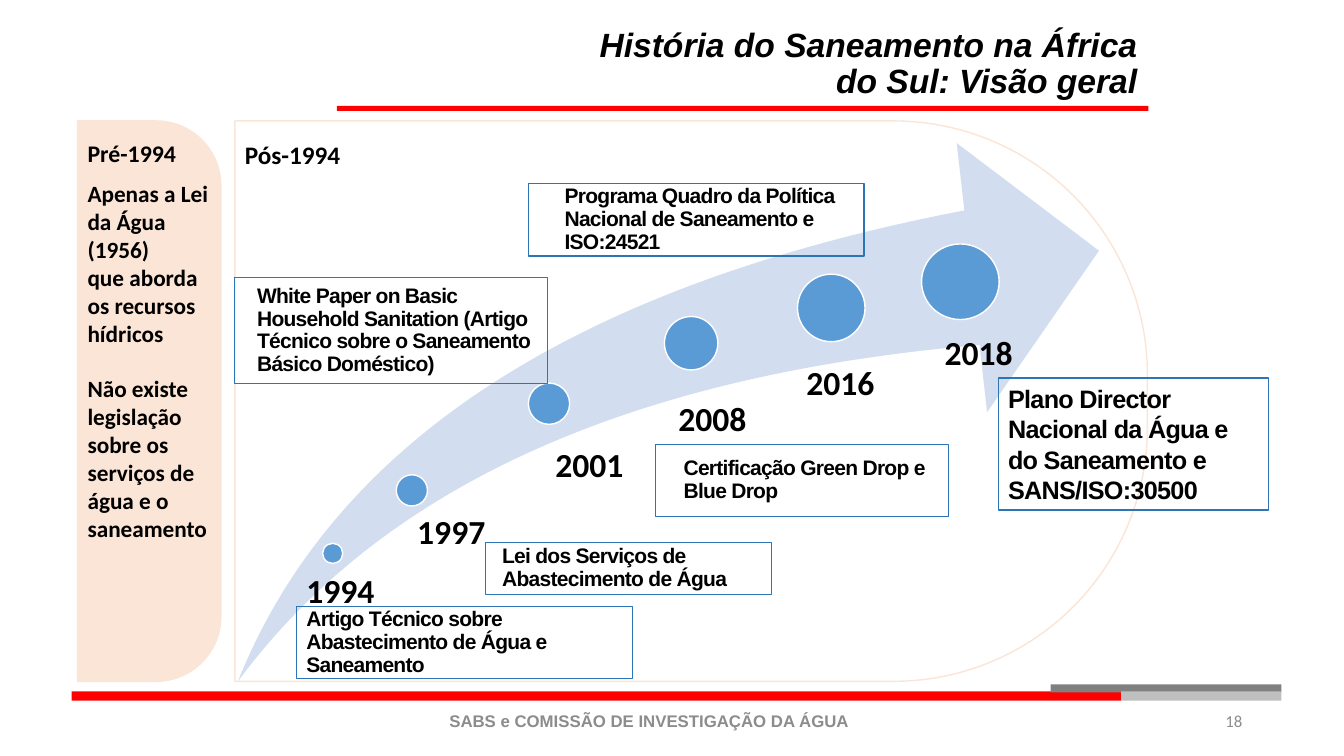
from pptx import Presentation
from pptx.dml.color import RGBColor
from pptx.enum.shapes import MSO_SHAPE
from pptx.enum.text import MSO_ANCHOR, MSO_AUTO_SIZE, PP_ALIGN
from pptx.util import Inches, Pt

RECT, OVAL = MSO_SHAPE.RECTANGLE, MSO_SHAPE.OVAL
SWOOSH, ROUND_TOP = MSO_SHAPE.SWOOSH_ARROW, MSO_SHAPE.ROUND_2_SAME_RECTANGLE
TOP, MIDDLE, BOTTOM = MSO_ANCHOR.TOP, MSO_ANCHOR.MIDDLE, MSO_ANCHOR.BOTTOM
LEFT, CENTER, RIGHT = PP_ALIGN.LEFT, PP_ALIGN.CENTER, PP_ALIGN.RIGHT
NO_FIT = MSO_AUTO_SIZE.NONE

COLORS = {
    "red": "FF0000", "gray": "808080", "silver": "BFBFBF", "footer": "8C8C8C",
    "peach": "FBE5D6", "swoosh": "D2DEEF", "dot": "5B9BD5",
    "border": "2E75B6", "white": "FFFFFF", "black": "000000",
}

BARS = [
    ((3.34, 1.05, 8.05, 0.05), "red"),
    ((0.71, 6.86, 10.41, 0.09), "red"),
    ((10.42, 6.79, 2.29, 0.08), "gray"),
    ((11.12, 6.86, 1.59, 0.09), "silver"),
]

# year, year position, dot box, note box, note left inset, note size, line spacing, note
MILESTONES = [
    ("1994", (2.94, 5.6), (3.2, 5.39, 0.2, 0.2), (2.94, 6.02, 3.33, 0.71), 0.1, 15, 0.9,
     "Artigo Técnico sobre Abastecimento de Água e Saneamento"),
    ("1997", (4.04, 5.02), (3.93, 4.71, 0.31, 0.31), (4.82, 5.38, 2.83, 0.52), 0.16, 15, 0.9,
     "Lei dos Serviços de Abastecimento de Água"),
    ("2001", (5.41, 4.35), (5.24, 3.8, 0.41, 0.41), (2.33, 2.75, 3.1, 1.06), 0.22, 15, 0.9,
     "White Paper on Basic Household Sanitation (Artigo Técnico sobre o Saneamento "
     "Básico Doméstico)"),
    ("2008", (6.63, 3.9), (6.59, 3.14, 0.53, 0.53), (6.5, 4.41, 2.91, 0.71), 0.28, 15, 0.9,
     "Certificação Green Drop e Blue Drop"),
    ("2016", (7.9, 3.54), (7.91, 2.72, 0.67, 0.67), (5.24, 1.82, 3.33, 0.72), 0.36, 15, 0.9,
     "Programa Quadro da Política Nacional de Saneamento e ISO:24521"),
    ("2018", (9.27, 3.24), (9.14, 2.42, 0.77, 0.75), (9.9, 3.75, 2.68, 1.31), 0.1, 18, 1.0,
     "Plano Director Nacional da Água e do Saneamento e SANS/ISO:30500"),
]


def rgb(name):
    """Return the named colour."""
    return RGBColor.from_string(COLORS[name])


def add_shape(s, kind, box, fill=None, line=None, width=1):
    """Add a flat preset shape in the box."""
    sp = s.shapes.add_shape(kind, *map(Inches, box))
    sp.shadow.inherit = False
    if fill:
        sp.fill.solid()
        sp.fill.fore_color.rgb = rgb(fill)
    else:
        sp.fill.background()
    if line:
        sp.line.color.rgb = rgb(line)
        sp.line.width = Pt(width)
    else:
        sp.line.fill.background()
    return sp


def write(sp, paragraphs, size, font="Calibri", color="black", bold=True, italic=False,
          align=LEFT, anchor=TOP, spacing=None, tracking=None, insets=(0.1, 0.05, 0.1, 0.05)):
    """Fill a shape with paragraphs in one text style."""
    tf = sp.text_frame
    tf.word_wrap = True
    tf.auto_size = NO_FIT
    tf.vertical_anchor = anchor
    tf.margin_left, tf.margin_top, tf.margin_right, tf.margin_bottom = map(Inches, insets)
    tf.text = "\n".join(paragraphs)
    for p in tf.paragraphs:
        p.alignment = align
        p.line_spacing = spacing
        for r in p.runs:
            r.font.name, r.font.size = font, Pt(size)
            r.font.bold, r.font.italic = bold, italic
            r.font.color.rgb = rgb(color)
            if tracking is not None:
                r._r.get_or_add_rPr().set("spc", str(int(tracking * 100)))
    return tf


def add_text(s, box, paragraphs, size, **style):
    """Add a text box in the box."""
    return write(s.shapes.add_textbox(*map(Inches, box)), paragraphs, size, **style)


def add_frame(s):
    """Add the coloured bars, the footer and the page number."""
    for box, color in BARS:
        add_shape(s, RECT, box, color)
    add_text(s, (4.19, 6.95, 4.5, 0.4), ["SABS e COMISSÃO DE INVESTIGAÇÃO DA ÁGUA"], 12,
             font="Arial", color="footer", align=CENTER, anchor=MIDDLE)
    add_text(s, (9.42, 6.95, 3, 0.4), ["18"], 12,
             color="footer", bold=False, align=RIGHT, anchor=MIDDLE)


def add_title(s, box):
    """Place the slide title in the box."""
    sp = s.shapes.title
    sp.left, sp.top, sp.width, sp.height = map(Inches, box)
    write(sp, ["História do Saneamento na África do Sul: Visão geral"], 24, font="Arial",
          italic=True, align=RIGHT, anchor=BOTTOM, spacing=0.9)


def add_panel(s, box, fill=None):
    """Add a panel with rounded right corners that covers the box."""
    x, y, w, h = box
    sp = add_shape(s, ROUND_TOP, (x + (w - h) / 2, y + (h - w) / 2, h, w), fill, "peach")
    sp.adjustments[0], sp.adjustments[1] = 0.453, 0
    sp.rotation = 90


def add_before(s, box):
    """Add the panel on the years before 1994."""
    x, y, w, h = box
    add_panel(s, box, "peach")
    add_text(s, (x, y + 0.13, w, 0.39), ["Pré-1994"], 17)
    tf = add_text(s, (x, y + 0.53, w, 3.87), [
        "Apenas a Lei da Água (1956)",
        "que aborda os recursos hídricos",
        "Não existe legislação sobre os serviços de água e o saneamento",
    ], 16.6)
    tf.paragraphs[2].space_before = Pt(20)


def add_milestone(s, year, spot, dot, note_box, inset, size, spacing, note):
    """Add one dot with its year and its note."""
    add_shape(s, OVAL, dot, "dot", "white")
    sp = add_shape(s, RECT, note_box, line="border", width=0.75)
    right = 0.1 if size > 15 else 0
    write(sp, [note], size, font="Arial", anchor=MIDDLE, spacing=spacing, tracking=-0.5,
          insets=(inset, 0, right, 0))
    add_text(s, (*spot, 1.27, 0.5), [year], 24)


def add_after(s, box):
    """Add the panel on the years after 1994 with its timeline."""
    x, y, w, h = box
    add_panel(s, box)
    sp = add_shape(s, SWOOSH, (x + 0.03, y + 0.22, 8.54, 5.34), "swoosh")
    sp.adjustments[0], sp.adjustments[1] = 0.25, 0.25
    add_text(s, (x, y + 0.13, 3.64, 0.4), ["Pós-1994"], 18)
    for milestone in MILESTONES:
        add_milestone(s, *milestone)


def main():
    """Build and save the slide."""
    prs = Presentation()
    prs.slide_width, prs.slide_height = Inches(13.33), Inches(7.5)
    s = prs.slides.add_slide(prs.slide_layouts[5])
    add_frame(s)
    add_title(s, (5.74, 0.22, 5.64, 0.83))
    add_after(s, (2.33, 1.2, 9.05, 5.56))
    add_before(s, (0.77, 1.2, 1.42, 5.56))
    prs.save("out.pptx")


if __name__ == "__main__":
    main()
